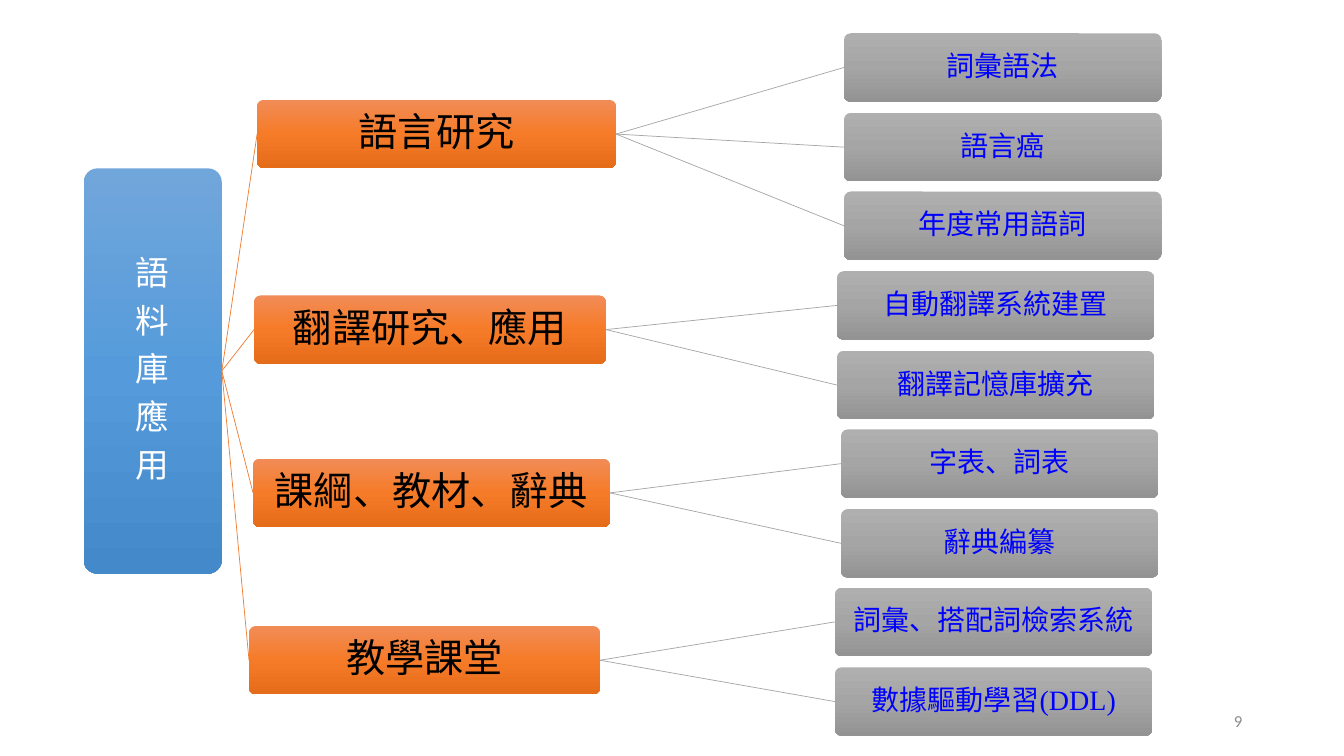
from copy import deepcopy
from itertools import count

from lxml.etree import SubElement
from pptx import Presentation
from pptx.dml.color import RGBColor
from pptx.enum.shapes import MSO_CONNECTOR, MSO_SHAPE
from pptx.enum.text import MSO_ANCHOR, PP_ALIGN
from pptx.oxml.ns import qn
from pptx.util import Pt

PX = 9144
CJK = "Noto Sans CJK SC"
COLORS = {
    "white": "FFFFFF", "black": "000000", "link": "0000FF", "page": "8C8C8C",
    "orange": "ED7D31", "gray": "A5A5A5",
}
SHADES = {
    "root": ("71A6DB", "559BDB", "448ACA"),
    "branch": ("F18C57", "F67B28", "E56C19"),
    "leaf": ("AFAFAF", "A5A5A5", "939393"),
}
ROOT = "語料庫應用"
TREE = [
    ("語言研究", (255, 99, 356), 837, ["詞彙語法", "語言癌", "年度常用語詞"]),
    ("翻譯研究、應用", (252, 293, 349), 830, ["自動翻譯系統建置", "翻譯記憶庫擴充"]),
    ("課綱、教材、辭典", (251, 455, 354), 834, ["字表、詞表", "辭典編纂"]),
    ("教學課堂", (247, 621, 348), 828, ["詞彙、搭配詞檢索系統", "數據驅動學習(DDL)"]),
]


def add_run(para, text, size, color, face=CJK):
    """Append one styled run to a paragraph."""
    run = para.add_run()
    run.text = text
    run.font.size = Pt(size)
    run.font.name = face
    run.font.color.rgb = RGBColor.from_string(COLORS[color])
    SubElement(run.font._element, qn("a:ea")).set("typeface", CJK)


def shade(shape, kind):
    """Fill a shape with its three-stop vertical gradient."""
    shape.fill.gradient()
    shape.fill.gradient_angle = 270
    stops = shape.fill.gradient_stops
    last = shape._element.spPr.find(qn("a:gradFill")).find(qn("a:gsLst"))
    last.append(deepcopy(last[-1]))
    stops = shape.fill.gradient_stops
    for place, (stop, color) in enumerate(zip(stops, SHADES[kind])):
        stop.position = place / 2
        stop.color.rgb = RGBColor.from_string(color)


def add_box(slide, kind, area, lines, size, color, inset, face=CJK):
    """Add a rounded box with centred lines of text."""
    box = slide.shapes.add_shape(MSO_SHAPE.ROUNDED_RECTANGLE, *[n * PX for n in area])
    box.adjustments[0] = 0.1
    box.shadow.inherit = False
    box.line.fill.background()
    shade(box, kind)
    frame = box.text_frame
    frame.word_wrap = True
    frame.vertical_anchor = MSO_ANCHOR.MIDDLE
    frame.margin_left = frame.margin_right = inset * PX
    frame.margin_top = frame.margin_bottom = inset * PX
    for row, line in enumerate(lines):
        para = frame.add_paragraph() if row else frame.paragraphs[0]
        para.alignment = PP_ALIGN.CENTER
        para.line_spacing = 0.9
        after = SubElement(para._p.get_or_add_pPr(), qn("a:spcAft"))
        SubElement(after, qn("a:spcPct")).set("val", "35000")
        add_run(para, line, size, color, face)
    return box


def link(slide, start, end, color):
    """Join the right side of one box to the left side of another."""
    line = slide.shapes.add_connector(MSO_CONNECTOR.STRAIGHT, 0, 0, 0, 0)
    line.begin_connect(start, 3)
    line.end_connect(end, 1)
    line.line.width = Pt(0.5)
    line.line.color.rgb = RGBColor.from_string(COLORS[color])
    SubElement(line._element.spPr, qn("a:effectLst"))


def add_page(slide, text):
    """Add the page number at the lower right."""
    box = slide.shapes.add_textbox(*[n * PX for n in (942, 695, 300, 40)])
    frame = box.text_frame
    frame.word_wrap = True
    frame.vertical_anchor = MSO_ANCHOR.MIDDLE
    para = frame.paragraphs[0]
    para.alignment = PP_ALIGN.RIGHT
    add_run(para, text, 12, "page", "Calibri")


def main():
    """Build the tree slide and save it."""
    deck = Presentation()
    deck.slide_width, deck.slide_height = 1333 * PX, 750 * PX
    slide = deck.slides.add_slide(deck.slide_layouts[6])
    root = add_box(slide, "root", (83, 167, 137, 402), ROOT, 24, "white", 2)
    rows = count()
    for title, (left, top, width), edge, leaves in TREE:
        area = (left, top, width, 68)
        branch = add_box(slide, "branch", area, [title], 28, "black", 2)
        link(slide, root, branch, "orange")
        for text in leaves:
            area = (edge, round(33.2 + 78.6 * next(rows)), 315, 68)
            face = "Times New Roman" if "DDL" in text else CJK
            leaf = add_box(slide, "leaf", area, [text], 20, "link", 1, face)
            link(slide, branch, leaf, "gray")
    add_page(slide, "9")
    deck.save("out.pptx")


if __name__ == "__main__":
    main()
